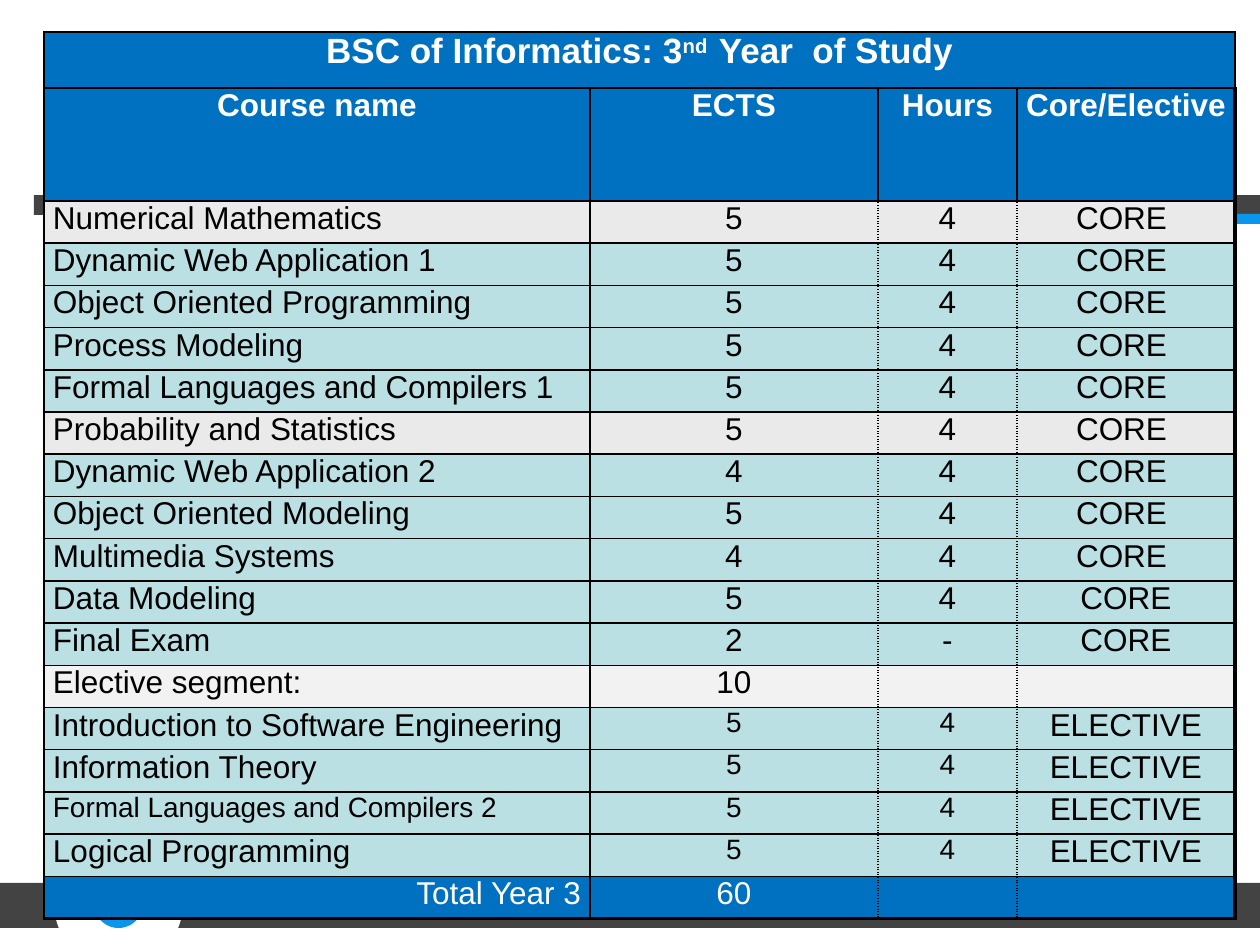
from itertools import accumulate

from lxml import etree
from pptx import Presentation
from pptx.dml.color import RGBColor
from pptx.enum.shapes import MSO_SHAPE
from pptx.enum.text import PP_ALIGN
from pptx.oxml.ns import qn
from pptx.util import Pt

RECT, OVAL = MSO_SHAPE.RECTANGLE, MSO_SHAPE.OVAL
CENTER, RIGHT, JUSTIFY = PP_ALIGN.CENTER, PP_ALIGN.RIGHT, PP_ALIGN.JUSTIFY

PX = 914400 / 126
BLUE, TEAL, GREY, PALE = "0070C0", "BBE0E3", "EAEAEA", "F2F2F2"
DARK, BRIGHT, WHITE, BLACK = "434343", "0996ED", "FFFFFF", "000000"

# Background shapes: kind, left, top, width, height, colour
DECOR = [
    (RECT, 174, 883, 1086, 45, DARK),
    (RECT, 0, 883, 64, 45, DARK),
    (OVAL, 54, 839, 129, 129, WHITE),
    (OVAL, 94, 879, 49, 49, BRIGHT),
    (RECT, 34, 195, 1226, 20, DARK),
    (RECT, 54, 214, 1206, 10, BRIGHT),
]

# Title runs: text, superscript
TITLE = [("BSC of Informatics: 3", False), ("nd  ", True), ("Year  of Study", False)]
HEADER = ["Course name", "ECTS", "Hours", "Core/Elective"]

# Rows: fill, cell texts, text sizes
NORMAL, SMALL_NUMBERS, SMALL_LEFT = (18,) * 4, (18, 16, 16, 18), (16, 16, 16, 18)
COURSES = [
    (GREY, ("Numerical Mathematics", "5", "4", "CORE "), NORMAL),
    (TEAL, ("Dynamic Web Application 1", "5", "4", "CORE "), NORMAL),
    (TEAL, ("Object Oriented Programming", "5", "4", "CORE "), NORMAL),
    (TEAL, ("Process Modeling", "5", "4", "CORE "), NORMAL),
    (TEAL, ("Formal Languages and Compilers 1", "5", "4", "CORE "), NORMAL),
    (GREY, ("Probability and Statistics", "5", "4", "CORE "), NORMAL),
    (TEAL, ("Dynamic Web Application 2", "4", "4", "CORE "), NORMAL),
    (TEAL, ("Object Oriented Modeling", "5", "4", "CORE "), NORMAL),
    (TEAL, ("Multimedia Systems", "4", "4", "CORE "), NORMAL),
    (TEAL, ("Data Modeling ", "5", "4", "CORE"), NORMAL),
    (TEAL, ("Final Exam", "2", "-", "CORE"), NORMAL),
    (PALE, ("Elective segment:", "10", "", ""), NORMAL),
    (TEAL, ("Introduction to Software Engineering", "5", "4", "ELECTIVE"), SMALL_NUMBERS),
    (TEAL, ("Information Theory", "5", "4", "ELECTIVE"), SMALL_NUMBERS),
    (TEAL, ("Formal Languages and Compilers 2", "5", "4", "ELECTIVE"), SMALL_LEFT),
    (TEAL, ("Logical Programming", "5", "4", "ELECTIVE"), SMALL_NUMBERS),
]
TOTAL = (BLUE, ("Total Year 3", "60", "", ""), NORMAL)

LEFT, TOP, BOTTOM = 44, 32, 919
COL_WIDTHS = [546, 288, 139, 218]
TITLE_HEIGHT, HEADER_HEIGHT = 56, 113
CELL_MARGIN = 9


def px(n):
    return round(n * PX)


def rgb(color):
    return RGBColor.from_string(color)


def add_text(p, text, size=18, color=BLACK, bold=False, align=CENTER, superscript=False):
    p.alignment = align
    if not text:
        return
    r = p.add_run()
    r.text = text
    r.font.name = "Arial"
    r.font.size = Pt(size)
    r.font.bold = bold
    r.font.color.rgb = rgb(color)
    if superscript:
        r.font._element.set("baseline", "30000")


def add_border(cell, side, width=1, dash="solid"):
    tc_pr = cell._tc.get_or_add_tcPr()
    ln = etree.SubElement(tc_pr, qn(f"a:ln{side}"), w=str(Pt(width)))
    fill = etree.SubElement(ln, qn("a:solidFill"))
    etree.SubElement(fill, qn("a:srgbClr"), val=BLACK)
    etree.SubElement(ln, qn("a:prstDash"), val=dash)


def format_cell(cell, row, col, last_row, fill):
    cell.margin_left = cell.margin_right = px(CELL_MARGIN)
    cell.margin_top = cell.margin_bottom = 0
    body, last_col = row >= 2, col == len(COL_WIDTHS) - 1
    add_border(cell, "L", dash="sysDot" if body and col >= 2 else "solid")
    add_border(cell, "R", width=2.25 if last_col and row else 1,
               dash="sysDot" if body and col in (1, 2) else "solid")
    add_border(cell, "T", width=1.5 if row == 2 else 1)
    add_border(cell, "B", width=1.5 if row in (1, last_row) else 1)
    cell.fill.solid()
    cell.fill.fore_color.rgb = rgb(fill)


prs = Presentation()
prs.slide_width, prs.slide_height = px(1260), px(945)
s = prs.slides.add_slide(prs.slide_layouts[6])

# Background bands and circles
for kind, x, y, w, h, color in DECOR:
    sp = s.shapes.add_shape(kind, px(x), px(y), px(w), px(h))
    sp.shadow.inherit = False
    sp.fill.solid()
    sp.fill.fore_color.rgb = rgb(color)
    sp.line.fill.background()

# Table grid: the body rows share the height left under the header
rows = [(BLUE, ("",) * 4, NORMAL), (BLUE, HEADER, NORMAL), *COURSES, TOTAL]
last_row = len(rows) - 1
body_top = TOP + TITLE_HEIGHT + HEADER_HEIGHT
body_height = (BOTTOM - body_top) / (len(rows) - 2)
heights = [TITLE_HEIGHT, HEADER_HEIGHT] + [body_height] * (len(rows) - 2)

table = s.shapes.add_table(len(rows), len(COL_WIDTHS), px(LEFT), px(TOP),
                           px(sum(COL_WIDTHS)), px(BOTTOM - TOP)).table
table.first_row = table.horz_banding = False
for column, width in zip(table.columns, COL_WIDTHS):
    column.width = px(width)
edges = [px(y) for y in accumulate(heights, initial=TOP)]
for table_row, y0, y1 in zip(table.rows, edges, edges[1:]):
    table_row.height = y1 - y0

# Cells
for i, (fill, texts, sizes) in enumerate(rows):
    first_align = {1: CENTER, last_row: RIGHT}.get(i, JUSTIFY)
    for j, (text, size) in enumerate(zip(texts, sizes)):
        cell = table.cell(i, j)
        format_cell(cell, i, j, last_row, fill)
        add_text(cell.text_frame.paragraphs[0], text, size=size, bold=i == 1,
                 color=WHITE if fill == BLUE else BLACK,
                 align=CENTER if j else first_align)

# Title across the whole width
title = table.cell(0, 0)
title.merge(table.cell(0, len(COL_WIDTHS) - 1))
for text, superscript in TITLE:
    add_text(title.text_frame.paragraphs[0], text, size=20, color=WHITE, bold=True,
             superscript=superscript)

prs.save("out.pptx")
